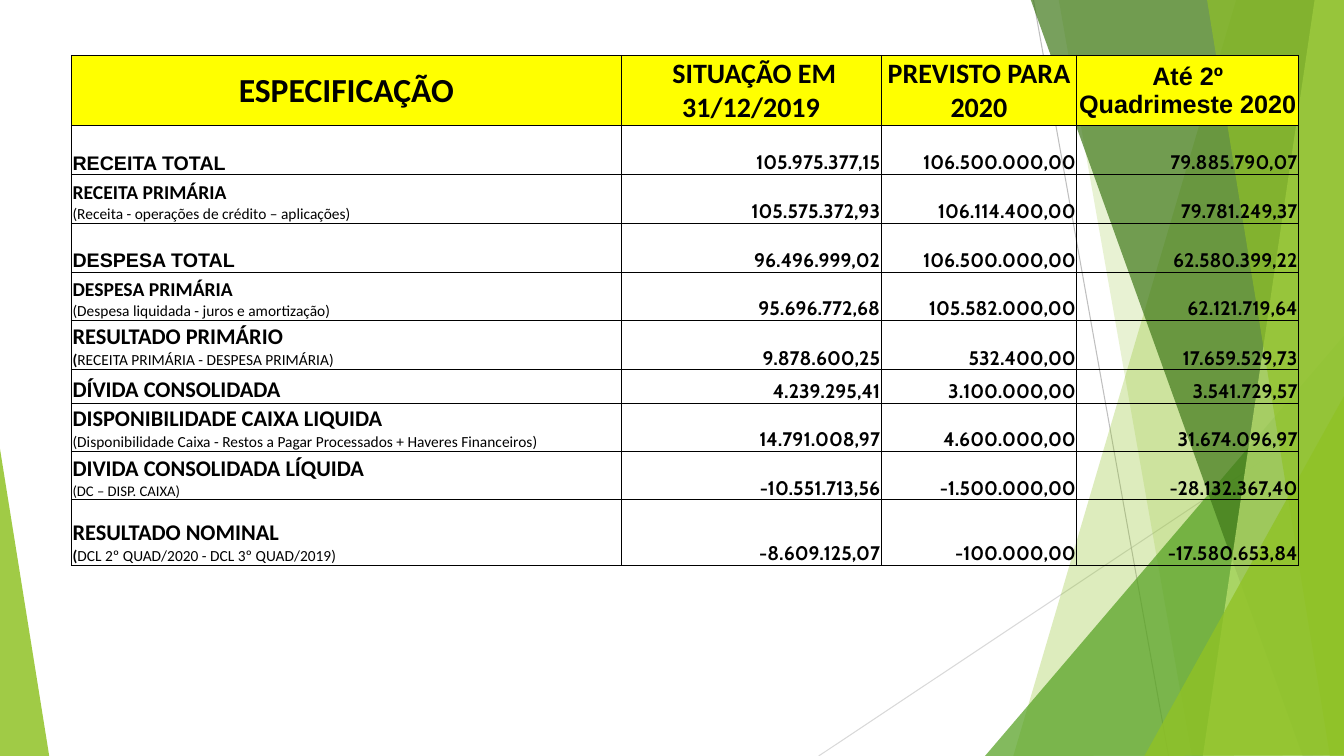
"""Build the slide with the table of fiscal results for 2019 and 2020."""
from lxml.etree import SubElement
from pptx import Presentation
from pptx.dml.color import RGBColor
from pptx.enum.shapes import MSO_CONNECTOR
from pptx.enum.text import MSO_ANCHOR, PP_ALIGN
from pptx.oxml.ns import qn
from pptx.util import Pt

PX = 9144
WIDTH, HEIGHT = 1333, 750


def rgb(code):
    return RGBColor.from_string(code)


def write(paragraph, text, size=14, font="Calibri", bold=True, align=PP_ALIGN.LEFT):
    paragraph.alignment = align
    run = paragraph.add_run()
    run.text = text
    run.font.size = Pt(size)
    run.font.name = font
    run.font.bold = bold
    run.font.color.rgb = rgb("000000")


deck = Presentation()
deck.slide_width, deck.slide_height = WIDTH * PX, HEIGHT * PX
slide = deck.slides.add_slide(deck.slide_layouts[6])

rays = [
    ((812, 750, 1333, 403), "D9D9D9"),
    ((1025, 0, 1159, 750), "BFBFBF"),
]
for ends, color in rays:
    ray = slide.shapes.add_connector(MSO_CONNECTOR.STRAIGHT, *[end * PX for end in ends])
    ray.line.color.rgb = rgb(color)
    ray.line.width = Pt(0.75)
    SubElement(ray._element.spPr, qn("a:effectLst"))

facets = [
    ([(1226, 0), (1005, 750), (1333, 749), (1334, -1)], "90C226", 30),
    ([(1050, -1), (1182, 750), (1334, 750), (1333, -1)], "90C226", 20),
    ([(977, 750), (1333, 333), (1334, 750)], "54A021", 72),
    ([(1022, -1), (1292, 750), (1334, 749), (1334, -1)], "3F7819", 70),
    ([(1304, -1), (1193, 750), (1334, 750), (1333, -1)], "C0E474", 70),
    ([(1197, -1), (1319, 750), (1336, 750), (1334, -1)], "90C226", 65),
    ([(1135, 750), (1333, 393), (1334, 749)], "90C226", 80),
    ([(-1, 439), (49, 751), (-1, 750)], "90C226", 85),
]
for corners, color, opacity in facets:
    outline = slide.shapes.build_freeform(*corners[0], scale=PX)
    outline.add_line_segments(corners[1:], close=True)
    facet = outline.convert_to_shape()
    facet.shadow.inherit = False
    facet.line.fill.background()
    facet.fill.solid()
    facet.fill.fore_color.rgb = rgb(color)
    tint = facet._element.spPr.find(".//" + qn("a:srgbClr"))
    SubElement(tint, qn("a:alpha"), val=str(opacity * 1000))

headings = [
    ("ESPECIFICAÇÃO", 24, "Calibri", 545),
    (" SITUAÇÃO EM 31/12/2019", 20, "Calibri", 258),
    ("PREVISTO PARA 2020", 20, "Calibri", 194),
    ("Até 2º Quadrimeste 2020", 18, "Arial", 220),
]
# height, title, size, font, note layout, bold lead, note, note size, amounts
results = [
    (49, "RECEITA TOTAL", 14, "Arial", None, "", "", 11,
     ["105.975.377,15", "106.500.000,00", "79.885.790,07"]),
    (49, "RECEITA PRIMÁRIA", 14, "Calibri", "break", "",
     "(Receita - operações de crédito – aplicações)", 11,
     ["105.575.372,93", "106.114.400,00", "79.781.249,37"]),
    (48, "DESPESA TOTAL", 14, "Arial", None, "", "", 11,
     ["96.496.999,02", "106.500.000,00", "62.580.399,22"]),
    (48, "DESPESA PRIMÁRIA ", 14, "Calibri", "break", "",
     "(Despesa liquidada - juros e amortização)", 11,
     ["95.696.772,68", "105.582.000,00", "62.121.719,64"]),
    (49, "RESULTADO PRIMÁRIO", 16, "Calibri", "paragraph", "(",
     "RECEITA PRIMÁRIA - DESPESA PRIMÁRIA)", 11,
     ["9.878.600,25", "532.400,00", "17.659.529,73"]),
    (33, "DÍVIDA CONSOLIDADA", 16, "Calibri", None, "", "", 11,
     ["4.239.295,41", "3.100.000,00", "3.541.729,57"]),
    (48, "DISPONIBILIDADE CAIXA LIQUIDA", 16, "Calibri", "break", "",
     "(Disponibilidade Caixa - Restos a Pagar Processados + Haveres Financeiros)", 11,
     ["14.791.008,97", "4.600.000,00", "31.674.096,97"]),
    (48, "DIVIDA CONSOLIDADA LÍQUIDA", 16, "Calibri", "paragraph", "",
     "(DC – DISP. CAIXA)", 10.5,
     ["-10.551.713,56", "-1.500.000,00", "-28.132.367,40"]),
    (65, "RESULTADO NOMINAL", 16, "Calibri", "paragraph", "(",
     "DCL 2º QUAD/2020 - DCL 3º QUAD/2019)", 11,
     ["-8.609.125,07", "-100.000,00", "-17.580.653,84"]),
]
heights = [61] + [result[0] for result in results]
fiscal = slide.shapes.add_table(
    len(heights), len(headings), 71 * PX, 55 * PX, 1217 * PX, sum(heights) * PX).table
fiscal.first_row = fiscal.horz_banding = False
for row, height in zip(fiscal.rows, heights):
    row.height = height * PX

last_column = len(headings) - 1
for r in range(len(heights)):
    for c in range(len(headings)):
        cell = fiscal.cell(r, c)
        cell.margin_left = cell.margin_right = cell.margin_top = PX
        cell.margin_bottom = 0
        cell.vertical_anchor = MSO_ANCHOR.BOTTOM if r else MSO_ANCHOR.MIDDLE
        outer_sides = {"L": c == 0, "R": c == last_column, "T": r == 0, "B": False}
        for side, outer in outer_sides.items():
            border = SubElement(cell._tc.get_or_add_tcPr(), qn("a:ln" + side),
                                w=str(Pt(1 if outer else 0.75)))
            SubElement(SubElement(border, qn("a:solidFill")), qn("a:srgbClr"), val="000000")
        if r:
            cell.fill.background()
        else:
            cell.fill.solid()
            cell.fill.fore_color.rgb = rgb("FFFF00")

for c, (heading, size, font, width) in enumerate(headings):
    fiscal.columns[c].width = width * PX
    write(fiscal.cell(0, c).text_frame.paragraphs[0], heading,
          size=size, font=font, align=PP_ALIGN.CENTER)

for r, (_, title, size, font, layout, lead, note, note_size, amounts) in enumerate(results, 1):
    label = fiscal.cell(r, 0).text_frame
    line = label.paragraphs[0]
    write(line, title, size=size, font=font)
    if layout == "break":
        line.add_line_break()
        SubElement(line._p[-1], qn("a:rPr"), sz=str(size * 100))
    elif layout == "paragraph":
        line = label.add_paragraph()
    if lead:
        write(line, lead, size=note_size)
    if note:
        write(line, note, size=note_size, bold=False)
    for c, amount in enumerate(amounts, 1):
        write(fiscal.cell(r, c).text_frame.paragraphs[0], amount,
              font="Cabin", align=PP_ALIGN.RIGHT)

deck.save("out.pptx")
